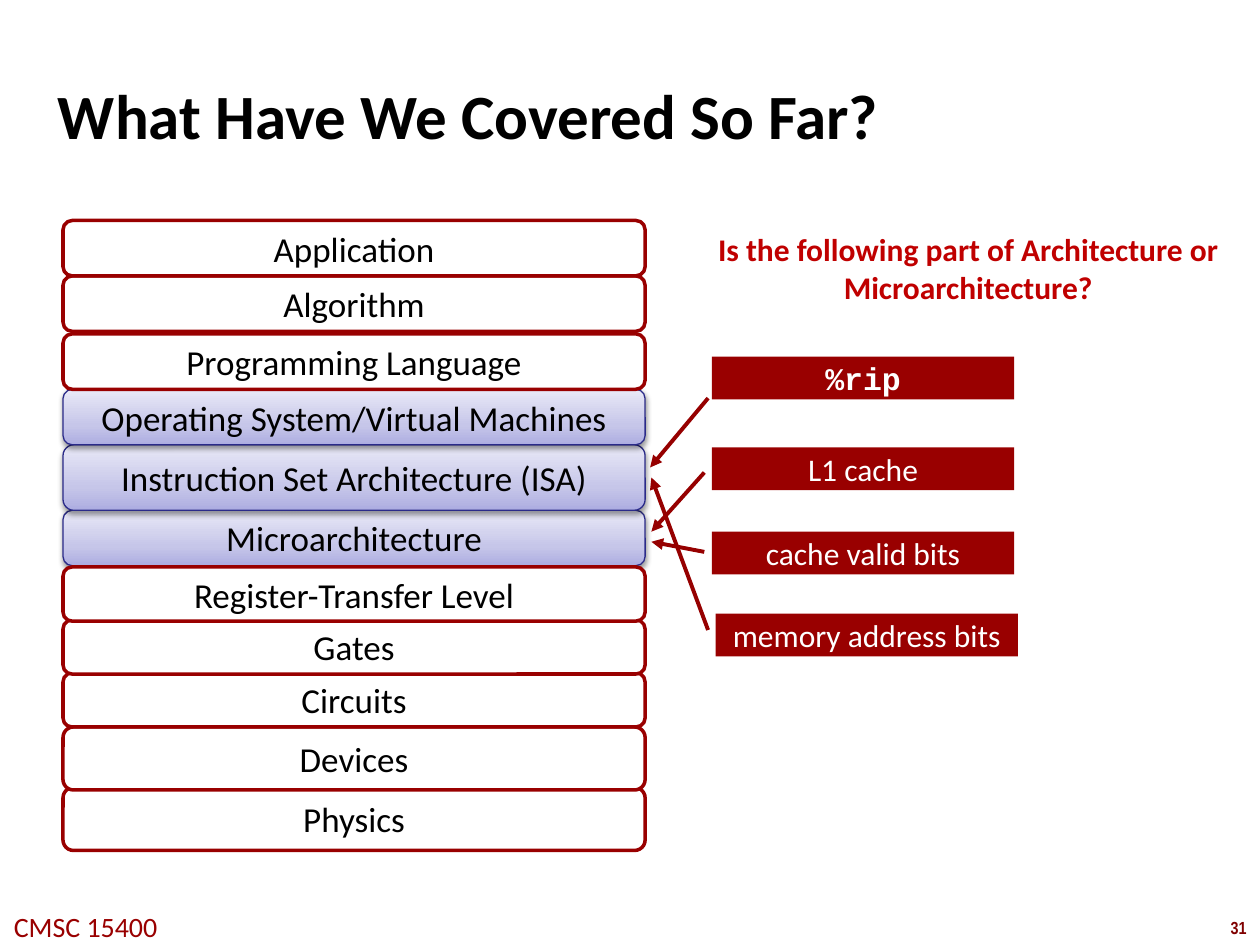
"""Build the slide that sorts hardware details into layers of the computing stack."""
from copy import deepcopy

from lxml.etree import SubElement
from pptx import Presentation
from pptx.dml.color import RGBColor
from pptx.enum.shapes import MSO_CONNECTOR, MSO_SHAPE
from pptx.enum.text import MSO_ANCHOR, PP_ALIGN
from pptx.oxml.ns import qn
from pptx.util import Inches, Pt

COLORS = {
    "black": "000000", "white": "FFFFFF", "red": "990000", "arrow": "960000",
    "ask": "C00000", "page": "800000", "edge": "2A2A89",
    "deep": "ADADE1", "mid": "C6C6E9", "pale": "E9E9F7",
}
COLS, ROWS = 100, 75

deck = Presentation()
deck.slide_width, deck.slide_height = Inches(10), Inches(7.5)
slide = deck.slides.add_slide(deck.slide_layouts[6])
shapes = slide.shapes
col, row = deck.slide_width / COLS, deck.slide_height / ROWS


def grid(*spots):
    return [round(spot * (row if i % 2 else col)) for i, spot in enumerate(spots)]


def write(shape, text, size=20, color="black", font="Calibri", bold=False,
          align=PP_ALIGN.CENTER, anchor=MSO_ANCHOR.MIDDLE, wrap=True, inset=None):
    frame = shape.text_frame
    frame.word_wrap, frame.vertical_anchor = wrap, anchor
    if inset is not None:
        frame.margin_left = frame.margin_right = Inches(inset)
        frame.margin_top = frame.margin_bottom = Inches(inset)
    para = frame.paragraphs[0]
    para.alignment = align
    run = para.add_run()
    run.text = text
    run.font.size, run.font.name, run.font.bold = Pt(size), font, bold
    run.font.color.rgb = RGBColor.from_string(COLORS[color])


texts = [
    ("CMSC 15400", (-0.3, 71.7, 14.2, 3.7),
     dict(size=16, color="red", wrap=False, anchor=MSO_ANCHOR.TOP)),
    ("31", (96.6, 72.3, 3.4, 2.7),
     dict(size=10, color="page", font="Arial Narrow", bold=True, wrap=False,
          anchor=MSO_ANCHOR.TOP)),
    ("What Have We Covered So Far?", (4.2, 2.8, 91.7, 12.5),
     dict(size=36, bold=True, align=PP_ALIGN.LEFT, inset=0.04)),
    ("Is the following part of Architecture or Microarchitecture?",
     (53.7, 17.8, 46.3, 7.5),
     dict(size=18, color="ask", bold=True, anchor=MSO_ANCHOR.TOP)),
]
for text, spot, style in texts:
    write(shapes.add_textbox(*grid(*spot)), text, **style)

layers = [
    ("Physics", 62.5, 5, False),
    ("Devices", 57.7, 5, False),
    ("Circuits", 53.4, 4.3, False),
    ("Gates", 49.2, 4.3, False),
    ("Microarchitecture", 40.5, 4.4, True),
    ("Instruction Set Architecture (ISA)", 35.3, 5.2, True),
    ("Operating System/Virtual Machines", 30.9, 4.4, True),
    ("Programming Language", 26.5, 4.4, False),
    ("Algorithm", 21.9, 4.4, False),
    ("Application", 17.5, 4.4, False),
    ("Register-Transfer Level", 45, 4.3, False),
]
for name, top, high, shaded in layers:
    box = shapes.add_shape(MSO_SHAPE.ROUNDED_RECTANGLE, *grid(5, top, 46.2, high))
    box.shadow.inherit = False
    props = box._element.spPr
    if shaded:
        box.fill.gradient()
        box.fill.gradient_angle = 90
        stops = props.find(qn("a:gradFill")).find(qn("a:gsLst"))
        stops.insert(1, deepcopy(stops[0]))
        shades = [("deep", 0), ("mid", 0.35), ("pale", 1)]
        for stop, (shade, place) in zip(box.fill.gradient_stops, shades):
            stop.color.rgb = RGBColor.from_string(COLORS[shade])
            stop.position = place
        glow = SubElement(props.find(qn("a:effectLst")), qn("a:outerShdw"),
                          blurRad=str(Pt(3.1)), dist=str(Pt(1.6)),
                          dir="5400000", rotWithShape="0")
        tint = SubElement(glow, qn("a:srgbClr"), val=COLORS["black"])
        SubElement(tint, qn("a:alpha"), val="38000")
    else:
        box.fill.solid()
        box.fill.fore_color.rgb = RGBColor.from_string(COLORS["white"])
    box.line.color.rgb = RGBColor.from_string(COLORS["edge" if shaded else "red"])
    box.line.width = Pt(0.75 if shaded else 2)
    write(box, name, wrap=False)

terms = [
    ("%rip", 56.5, 28.3, dict(font="Courier New", bold=True)),
    ("L1 cache", 56.5, 35.5, {}),
    ("cache valid bits", 56.5, 42.2, {}),
    ("memory address bits", 56.8, 48.7, {}),
]
for name, left, top, style in terms:
    tag = shapes.add_shape(MSO_SHAPE.RECTANGLE, *grid(left, top, 24, 3.4))
    tag.shadow.inherit = False
    tag.fill.solid()
    tag.fill.fore_color.rgb = RGBColor.from_string(COLORS["red"])
    tag.line.fill.background()
    write(tag, name, size=18, color="white", **style)

links = [
    (56.2, 31.6, 51.6, 37.1),
    (55.9, 37.5, 51.7, 42.2),
    (56.2, 50, 51.7, 37.9),
    (55.9, 43.8, 51.7, 43),
]
for ends in links:
    link = shapes.add_connector(MSO_CONNECTOR.STRAIGHT, *grid(*ends))
    link.line.color.rgb = RGBColor.from_string(COLORS["arrow"])
    link.line.width = Pt(2.25)
    props = link._element.spPr
    SubElement(props.find(qn("a:ln")), qn("a:tailEnd"), type="triangle")
    SubElement(props, qn("a:effectLst"))

deck.save("out.pptx")
